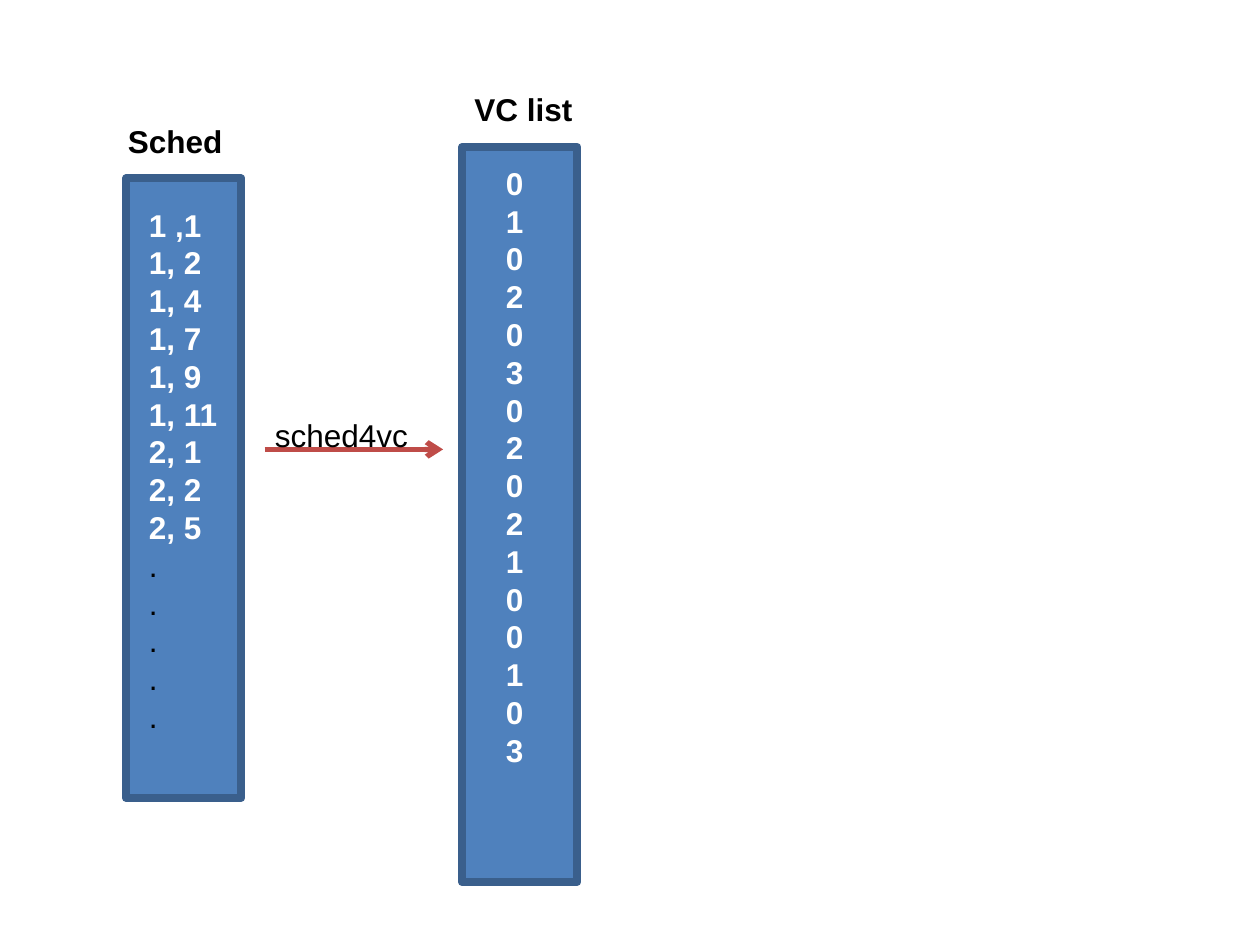
from lxml import etree
from pptx import Presentation
from pptx.dml.color import RGBColor
from pptx.enum.shapes import MSO_CONNECTOR, MSO_SHAPE
from pptx.enum.text import MSO_ANCHOR, MSO_AUTO_SIZE, PP_ALIGN
from pptx.oxml.ns import qn
from pptx.util import Inches, Pt

STRAIGHT = MSO_CONNECTOR.STRAIGHT
RECT = MSO_SHAPE.RECTANGLE
TOP = MSO_ANCHOR.TOP
GROW = MSO_AUTO_SIZE.SHAPE_TO_FIT_TEXT
LEFT = PP_ALIGN.LEFT

WHITE = RGBColor(0xFF, 0xFF, 0xFF)
BLACK = RGBColor(0x00, 0x00, 0x00)
BLUE = RGBColor(0x4F, 0x81, 0xBD)
NAVY = RGBColor(0x3A, 0x5F, 0x8C)
RED = RGBColor(0xBF, 0x4C, 0x48)

COLS, ROWS = 120, 90
BAR_WIDTH = 11
LABEL_HEIGHT = 4.8


class Sketch:
    """Draws styled elements on one slide, placed by grid columns and rows."""

    font = "Arial"
    size = Pt(18)

    def __init__(self, deck):
        self.slide = deck.slides.add_slide(deck.slide_layouts[6])
        self.col = deck.slide_width / COLS
        self.row = deck.slide_height / ROWS

    def place(self, x, y, width, height):
        return (round(x * self.col), round(y * self.row),
                round(width * self.col), round(height * self.row))

    def bar(self, x, y, height):
        shape = self.slide.shapes.add_shape(RECT, *self.place(x, y, BAR_WIDTH, height))
        shape.shadow.inherit = False
        shape.fill.solid()
        shape.fill.fore_color.rgb = BLUE
        shape.line.color.rgb = NAVY
        shape.line.width = Pt(4.5)

    def text(self, x, y, width, height, lines):
        frame = self.slide.shapes.add_textbox(*self.place(x, y, width, height)).text_frame
        frame.word_wrap = False
        frame.auto_size = GROW
        frame.vertical_anchor = TOP
        for i, (words, color, bold) in enumerate(lines):
            para = frame.add_paragraph() if i else frame.paragraphs[0]
            para.alignment = LEFT
            run = para.add_run()
            run.text = words
            run.font.name = self.font
            run.font.size = self.size
            run.font.bold = bold
            run.font.color.rgb = color

    def label(self, x, y, width, words, bold=True):
        self.text(x, y, width, LABEL_HEIGHT, [(words, BLACK, bold)])

    def arrow(self, start, end, y):
        left, top, width, _ = self.place(start, y, end - start, 0)
        arrow = self.slide.shapes.add_connector(STRAIGHT, left, top, left + width, top)
        arrow.line.color.rgb = RED
        arrow.line.width = Pt(3)
        etree.SubElement(arrow.line._get_or_add_ln(), qn("a:tailEnd"), type="arrow")
        etree.SubElement(arrow._element.spPr, qn("a:effectLst"))


def main():
    deck = Presentation()
    deck.slide_width, deck.slide_height = Inches(10), Inches(7.5)
    sketch = Sketch(deck)

    pairs = ["1 ,1", "1, 2", "1, 4", "1, 7", "1, 9", "1, 11", "2, 1", "2, 2", "2, 5"]
    sched = [(pair, WHITE, True) for pair in pairs] + [(".", BLACK, False)] * 5
    sketch.bar(12, 17, 59)
    sketch.text(13, 19, 8.9, 55.7, sched)
    sketch.label(11, 11, 11.5, "Sched")

    sketch.arrow(25.2, 42.2, 42.8)
    sketch.label(25, 39, 15.2, "sched4vc", bold=False)

    sketch.bar(44, 14, 70)
    sketch.text(47, 15, 4.1, 59.4, [(digit, WHITE, True) for digit in "0102030202100103"])
    sketch.label(44, 8, 11.9, "VC list")

    deck.save("out.pptx")


if __name__ == "__main__":
    main()
